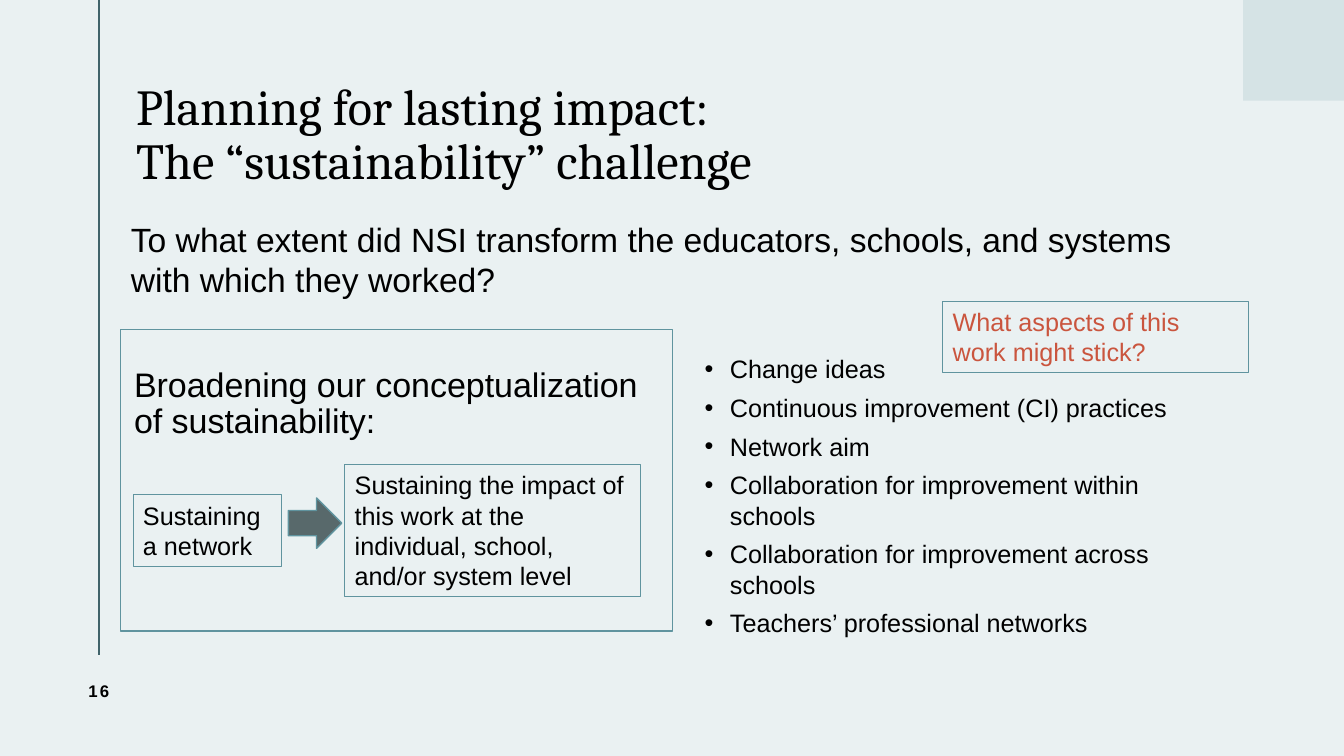
from lxml.etree import SubElement
from pptx import Presentation
from pptx.dml.color import RGBColor
from pptx.enum.shapes import MSO_CONNECTOR, MSO_SHAPE
from pptx.enum.text import MSO_ANCHOR, MSO_AUTO_SIZE, PP_ALIGN
from pptx.oxml.ns import qn
from pptx.util import Inches, Pt

INK, OUTLINE, ACCENT = "000000", "60949F", "CA553E"


def color(hex_value):
    return RGBColor.from_string(hex_value)


def add_text(place, lines, size, ink=INK, family="Arial", outlined=False,
             frame_format=None, paragraph_format=None):
    box = slide.shapes.add_textbox(*map(Inches, place))
    if outlined:
        box.line.color.rgb = color(OUTLINE)
        box.line.width = Pt(0.75)
    frame = box.text_frame
    for name, value in {"word_wrap": True, **(frame_format or {})}.items():
        setattr(frame, name, value)
    frame.text = "\n".join(lines)
    for paragraph in frame.paragraphs:
        for name, value in (paragraph_format or {}).items():
            setattr(paragraph, name, value)
        for run in paragraph.runs:
            for name, value in {"size": Pt(size), "name": family}.items():
                setattr(run.font, name, value)
            run.font.color.rgb = color(ink)
    return frame


presentation = Presentation()
presentation.slide_width = Inches(13.33)
presentation.slide_height = Inches(7.5)
slide = presentation.slides.add_slide(presentation.slide_layouts[6])
slide.background.fill.solid()
slide.background.fill.fore_color.rgb = color("EAF1F2")

# Margin rule and corner square
margin_rule = slide.shapes.add_connector(
    MSO_CONNECTOR.STRAIGHT, Inches(0.98), Inches(0), Inches(0.98), Inches(6.5))
margin_rule.line.color.rgb = color("40636A")
margin_rule.line.width = Pt(1.5)
SubElement(margin_rule._element.spPr, qn("a:effectLst"))

corner = slide.shapes.add_shape(
    MSO_SHAPE.RECTANGLE, Inches(12.33), Inches(0), Inches(1), Inches(1))
corner.shadow.inherit = False
corner.fill.solid()
corner.fill.fore_color.rgb = color("D5E3E5")
corner.line.fill.background()

# Heading and guiding question
add_text((1.35, 0.57, 10.01, 1.56),
         ["Planning for lasting impact:\vThe “sustainability” challenge"],
         36, family="Cambria",
         frame_format={"margin_left": 0, "vertical_anchor": MSO_ANCHOR.MIDDLE},
         paragraph_format={"line_spacing": 0.9})
add_text((1.2, 2.12, 10.52, 0.91),
         ["To what extent did NSI transform the educators, schools, "
          "and systems with which they worked?"], 24)

# Sustainability panel
add_text((1.2, 3.27, 5.47, 2.99),
         ["Broadening our conceptualization of sustainability:"],
         24.3, outlined=True,
         frame_format={"margin_left": Inches(0.13), "margin_top": Inches(0.38)},
         paragraph_format={"line_spacing": 0.9})

# Aspects that might stick
aspects = add_text(
    (6.99, 3.26, 4.87, 3.72),
    ["Change ideas",
     "Continuous improvement (CI) practices",
     "Network aim",
     "Collaboration for improvement within schools",
     "Collaboration for improvement across schools",
     "Teachers’ professional networks"], 18,
    frame_format={"margin_left": 0, "margin_right": 0,
                  "margin_top": Inches(0.25), "margin_bottom": 0},
    paragraph_format={"space_after": Pt(6)})
for aspect in aspects.paragraphs:
    properties = aspect._p.get_or_add_pPr()
    properties.set("marL", str(Inches(0.25)))
    properties.set("indent", str(-Inches(0.25)))
    SubElement(properties, qn("a:buFont"), typeface="Arial")
    SubElement(properties, qn("a:buChar"), char="•")

# Outlined notes: two stages and the question about the aspects
for place, wording, ink in [
    ((1.32, 4.91, 1.47, 0.71), "Sustaining a network", INK),
    ((3.42, 4.61, 2.93, 1.31),
     "Sustaining the impact of this work at the individual, school, "
     "and/or system level", INK),
    ((9.35, 2.99, 3.03, 0.71), "What aspects of this work might stick?", ACCENT),
]:
    add_text(place, [wording], 18, ink, outlined=True,
             frame_format={"auto_size": MSO_AUTO_SIZE.SHAPE_TO_FIT_TEXT})

# Arrow between the stages
stage_arrow = slide.shapes.add_shape(
    MSO_SHAPE.RIGHT_ARROW, Inches(2.86), Inches(4.94), Inches(0.53), Inches(0.5))
stage_arrow.shadow.inherit = False
stage_arrow.fill.solid()
stage_arrow.fill.fore_color.rgb = color("58696B")
stage_arrow.line.color.rgb = color(OUTLINE)
stage_arrow.line.width = Pt(1)

# Page number
page_number = add_text((0.45, 6.5, 1.06, 0.71), ["16"], 12,
                       frame_format={"vertical_anchor": MSO_ANCHOR.MIDDLE},
                       paragraph_format={"alignment": PP_ALIGN.CENTER})
digits = page_number.paragraphs[0].runs[0]
digits.font.bold = True
digits.font._element.set("spc", "150")

presentation.save("out.pptx")
